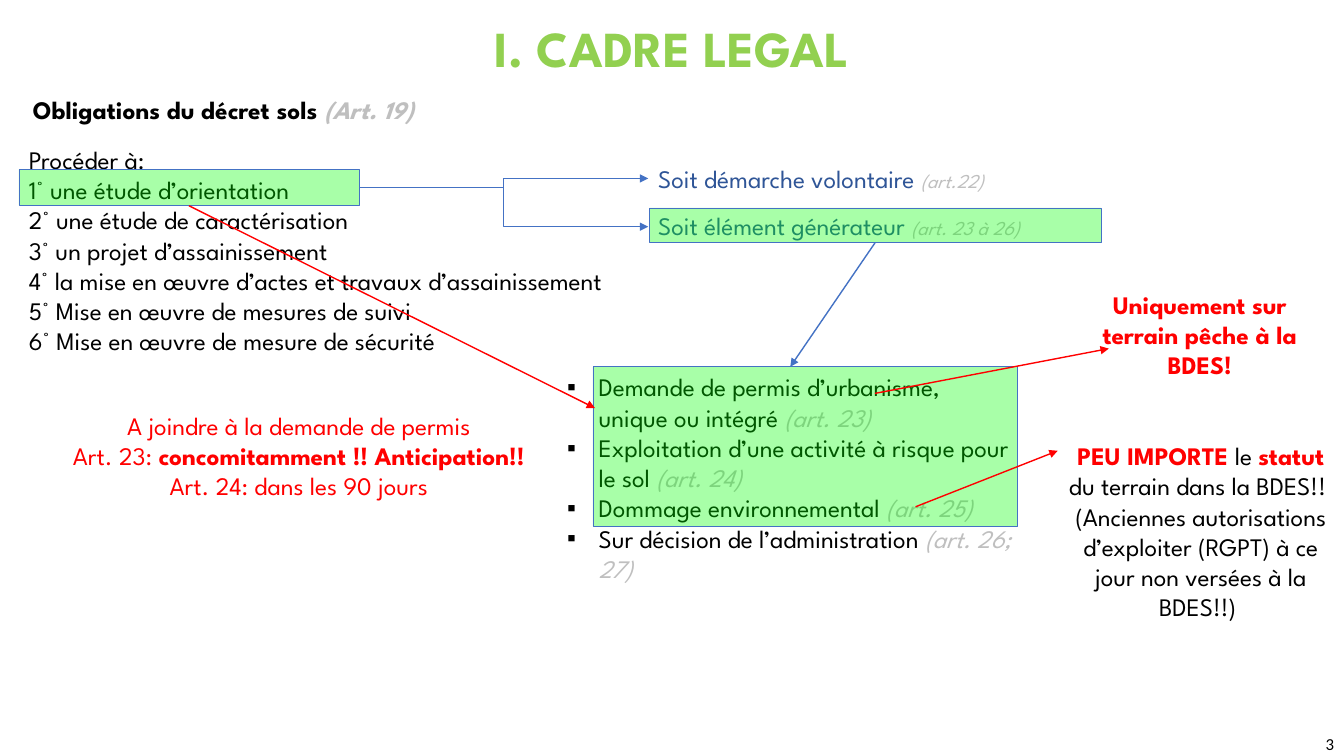
from dataclasses import dataclass
from lxml.etree import SubElement
from pptx import Presentation
from pptx.dml.color import RGBColor
from pptx.enum.shapes import MSO_CONNECTOR, MSO_SHAPE
from pptx.enum.text import MSO_ANCHOR, PP_ALIGN
from pptx.oxml.ns import qn
from pptx.util import Pt


@dataclass(frozen=True)
class Theme:
    font: str = "League Spartan"
    plain: str = "Calibri"
    title: int = 36
    body: int = 18
    note: int = 14
    page: int = 12
    black: str = "000000"
    lime: str = "92D050"
    green: str = "00FF00"
    gray: str = "BFBFBF"
    blue: str = "4472C4"
    navy: str = "2F5597"
    red: str = "FF0000"


THEME = Theme()
CITE = {"color": THEME.gray, "italic": True}
SMALL = {**CITE, "size": THEME.note}
BOLD = {"bold": True}
ALERT = {"color": THEME.red, "bold": True}


def style(font, name=THEME.font, size=THEME.body, color=THEME.black,
          bold=False, italic=False):
    font.name = name
    font.size = Pt(size)
    font.bold = bold
    font.italic = italic
    font.color.rgb = RGBColor.from_string(color)


def bullet(para, indent):
    props = para._p.get_or_add_pPr()
    props.set("marL", str(Pt(indent)))
    props.set("indent", str(-Pt(indent)))
    SubElement(props, qn("a:buFont")).set("typeface", "Arial")
    SubElement(props, qn("a:buChar")).set("char", "▪")


def text(slide, box, paras, align=PP_ALIGN.LEFT, anchor=MSO_ANCHOR.TOP,
         space=None, indent=0, **look):
    frame = slide.shapes.add_textbox(*map(Pt, box)).text_frame
    frame.word_wrap = True
    frame.vertical_anchor = anchor
    for num, parts in enumerate(paras):
        para = frame.add_paragraph() if num else frame.paragraphs[0]
        if indent:
            bullet(para, indent)
        para.alignment = align
        para.line_spacing = space
        for part in [parts] if isinstance(parts, str) else parts:
            words, extra = (part, {}) if isinstance(part, str) else part
            run = para.add_run()
            run.text = words
            style(run.font, **{**look, **extra})


def mark(slide, box):
    rect = slide.shapes.add_shape(MSO_SHAPE.RECTANGLE, *map(Pt, box))
    rect.shadow.inherit = False
    rect.fill.solid()
    rect.fill.fore_color.rgb = RGBColor.from_string(THEME.green)
    color = rect.fill._xPr.find(qn("a:solidFill"))[0]
    SubElement(color, qn("a:alpha")).set("val", "34000")
    rect.line.color.rgb = RGBColor.from_string(THEME.blue)
    rect.line.width = Pt(0.5)


def arrow(slide, start, end, color, kind=MSO_CONNECTOR.STRAIGHT):
    link = slide.shapes.add_connector(kind, *map(Pt, start + end))
    link.line.color.rgb = RGBColor.from_string(color)
    link.line.width = Pt(1)
    SubElement(link.line._get_or_add_ln(), qn("a:tailEnd")).set("type", "triangle")
    SubElement(link._element.spPr, qn("a:effectLst"))


def duties(slide):
    text(slide, (16.5, 63.5, 499, 29),
         [["Obligations du décret sols ", ("(Art. 19)", CITE)]], bold=True)
    text(slide, (13.5, 99.5, 472, 181), [
        "Procéder à:",
        "1° une étude d’orientation",
        "2° une étude de caractérisation",
        "3° un projet d’assainissement",
        "4° la mise en œuvre d’actes et travaux d’assainissement",
        "5° Mise en œuvre de mesures de suivi",
        "6° Mise en œuvre de mesure de sécurité",
    ])
    mark(slide, (13.5, 121, 243, 25.5))


def paths(slide):
    text(slide, (463, 113, 348, 29),
         [["Soit démarche volontaire ", ("(art.22)", SMALL)]], color=THEME.navy)
    text(slide, (463, 147, 336, 46),
         [["Soit élément générateur ", ("(art. 23 à 26)", SMALL)]], color=THEME.navy)
    for y in (127.5, 162):
        arrow(slide, (256.5, 134), (463, y), THEME.blue, MSO_CONNECTOR.ELBOW)


def triggers(slide):
    text(slide, (398, 262, 332, 225), [
        ["Demande de permis d’urbanisme, unique ou intégré ", ("(art. 23)", CITE)],
        ["Exploitation d’une activité à risque pour le sol ", ("(art. 24)", CITE)],
        ["Dommage environnemental ", ("(art. 25)", CITE)],
        ["Sur décision de l’administration ", ("(art. 26; 27)", CITE)],
    ], indent=22.5)
    mark(slide, (464, 148.5, 322.5, 24.5))
    arrow(slide, (625, 173.5), (564.5, 262), THEME.blue)
    mark(slide, (423.5, 262, 303, 114))


def remarks(slide):
    mid = PP_ALIGN.CENTER
    arrow(slide, (135, 147), (425, 291.5), THEME.red)
    text(slide, (41, 289.5, 345, 117), [
        "A joindre à la demande de permis",
        ["Art. 23: ", ("concomitamment !! Anticipation!!", BOLD)],
        "Art. 24: dans les 90 jours",
    ], align=mid, color=THEME.red)
    text(slide, (755.5, 311, 204.5, 181), [
        [("PEU IMPORTE ", ALERT), "le ", ("statut", ALERT),
         " du terrain dans la BDES!! "],
        "(Anciennes autorisations d’exploiter (RGPT) à ce jour non versées à la BDES!!) ",
    ], align=mid)
    arrow(slide, (654, 362), (755.5, 322), THEME.red)
    text(slide, (772.5, 203, 169, 73),
         ["Uniquement sur terrain pêche à la BDES!"], align=mid, **ALERT)
    arrow(slide, (625, 281), (792, 249), THEME.red)


def main():
    deck = Presentation()
    deck.slide_width, deck.slide_height = Pt(960), Pt(540)
    slide = deck.slides.add_slide(deck.slide_layouts[6])
    text(slide, (66, 3, 828, 67), ["I. CADRE LEGAL"], align=PP_ALIGN.CENTER,
         anchor=MSO_ANCHOR.MIDDLE, space=0.9, size=THEME.title,
         color=THEME.lime, bold=True)
    text(slide, (744, 520.5, 216, 21.5), ["3"], align=PP_ALIGN.RIGHT,
         anchor=MSO_ANCHOR.MIDDLE, name=THEME.plain, size=THEME.page)
    duties(slide)
    paths(slide)
    triggers(slide)
    remarks(slide)
    deck.save("out.pptx")


if __name__ == "__main__":
    main()
